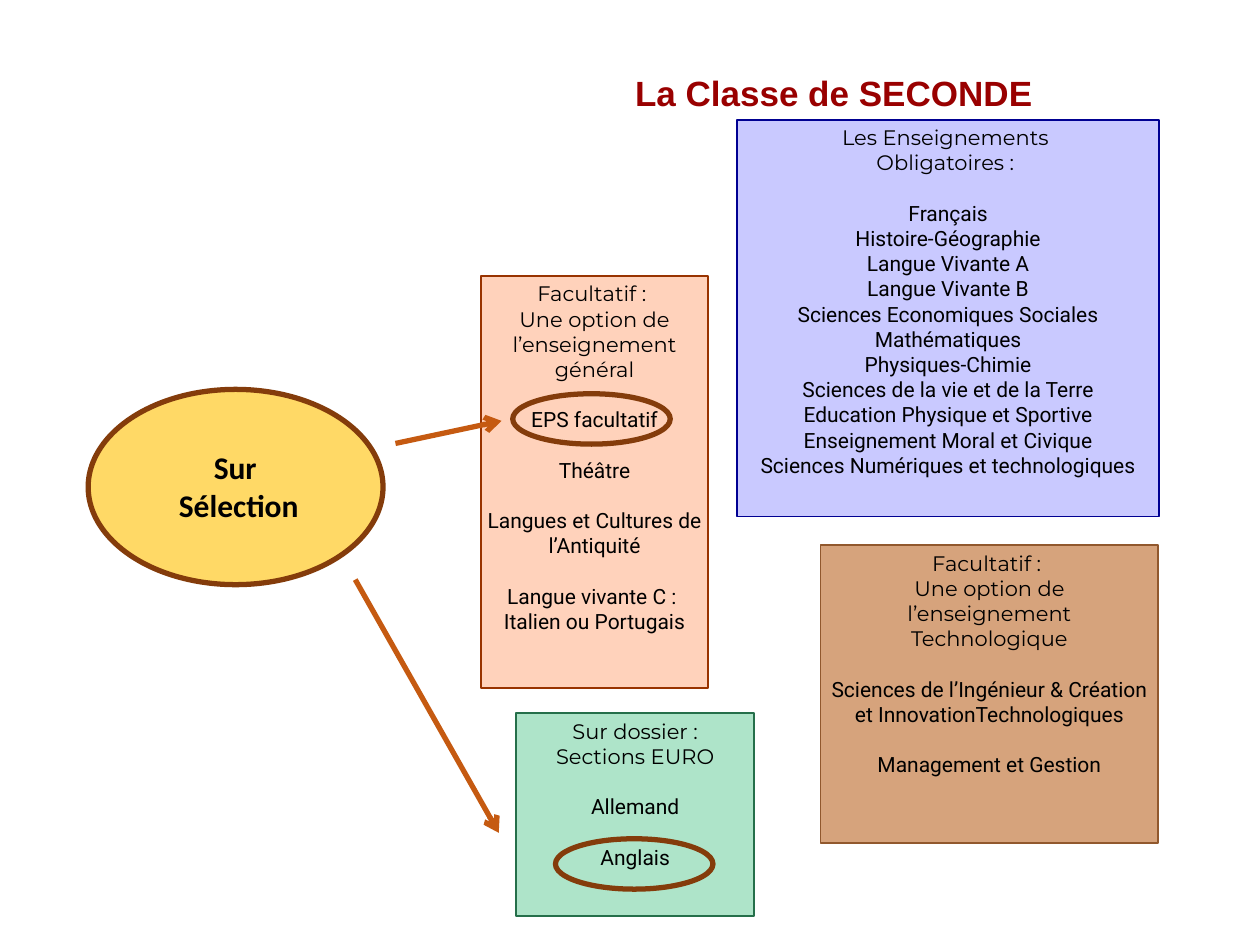
from dataclasses import dataclass

from lxml import etree
from pptx import Presentation
from pptx import util as u
from pptx.dml.color import RGBColor
from pptx.enum import shapes, text
from pptx.oxml.ns import qn


@dataclass(frozen=True)
class Theme:
    title_color: str = "990000"
    ink: str = "000000"
    ring: str = "843C0B"
    arrow: str = "C55A11"
    bubble: str = "FFD966"
    title_size: float = 20
    label_size: float = 18
    body_size: float = 12
    title_font: str = "Arial"
    label_font: str = "Calibri"
    heading_font: str = "Montserrat"
    body_font: str = "Roboto"
    inset: float = 2.88
    group_gap: float = 14.4
    thin: float = 1
    thick: float = 3


class Diagram:
    """Holds the theme and the slide being drawn; lengths are points."""

    def __init__(self, slide, theme):
        self.slide = slide
        self.theme = theme

    def _style(self, paragraph, font, size, color, bold=False):
        for run in paragraph.runs:
            run.font.name = font
            run.font.size = u.Pt(size)
            run.font.bold = bold
            run.font.color.rgb = RGBColor.from_string(color)

    def _shape(self, kind, place, line, width, fill=None):
        shape = self.slide.shapes.add_shape(kind, *map(u.Pt, place))
        shape.shadow.inherit = False
        if fill:
            shape.fill.solid()
            shape.fill.fore_color.rgb = RGBColor.from_string(fill)
        else:
            shape.fill.background()
        shape.line.color.rgb = RGBColor.from_string(line)
        shape.line.width = u.Pt(width)
        return shape

    def _set_insets(self, frame):
        frame.margin_left = frame.margin_right = u.Pt(self.theme.inset)
        frame.margin_top = frame.margin_bottom = u.Pt(self.theme.inset)

    def title(self, place, wording, drop):
        """Place a title whose line starts `drop` points below the box top."""
        theme = self.theme
        frame = self.slide.shapes.add_textbox(*map(u.Pt, place)).text_frame
        frame.word_wrap = True
        self._set_insets(frame)
        frame.margin_top = u.Pt(drop)
        frame.text = wording
        self._style(frame.paragraphs[0], theme.title_font, theme.title_size,
                    theme.title_color, bold=True)

    def label(self, place, lines):
        theme = self.theme
        frame = self.slide.shapes.add_textbox(*map(u.Pt, place)).text_frame
        frame.word_wrap = True
        frame.text = "\n".join(lines)
        for paragraph in frame.paragraphs:
            paragraph.alignment = text.PP_ALIGN.CENTER
            self._style(paragraph, theme.label_font, theme.label_size,
                        theme.ink, bold=True)

    def panel(self, place, fill, line, heading, groups):
        """Draw a box with heading lines, then groups of lines set apart."""
        theme = self.theme
        shape = self._shape(shapes.MSO_SHAPE.RECTANGLE, place, line, theme.thin, fill)
        frame = shape.text_frame
        frame.word_wrap = True
        frame.vertical_anchor = text.MSO_ANCHOR.TOP
        self._set_insets(frame)
        blocks = [heading, *groups]
        frame.text = "\n".join(line for block in blocks for line in block)
        paragraphs = iter(frame.paragraphs)
        for number, block in enumerate(blocks):
            font = theme.body_font if number else theme.heading_font
            for position in range(len(block)):
                paragraph = next(paragraphs)
                paragraph.alignment = text.PP_ALIGN.CENTER
                if number and position == 0:
                    paragraph.space_before = u.Pt(theme.group_gap)
                self._style(paragraph, font, theme.body_size, theme.ink)

    def ellipse(self, place, fill=None):
        self._shape(shapes.MSO_SHAPE.OVAL, place, self.theme.ring, self.theme.thick, fill)

    def arrow(self, start, end):
        connector = self.slide.shapes.add_connector(
            shapes.MSO_CONNECTOR.STRAIGHT, *map(u.Pt, (*start, *end)))
        connector.line.color.rgb = RGBColor.from_string(self.theme.arrow)
        connector.line.width = u.Pt(self.theme.thick)
        etree.SubElement(connector.line._get_or_add_ln(), qn("a:tailEnd"), type="arrow")
        etree.SubElement(connector._element.spPr, qn("a:effectLst"))


def main():
    presentation = Presentation()
    presentation.slide_width = u.Pt(720)
    presentation.slide_height = u.Pt(540)
    slide = presentation.slides.add_slide(presentation.slide_layouts[6])
    diagram = Diagram(slide, Theme())

    diagram.title((360, 15.84, 263.5, 79.2), "La Classe de SECONDE", drop=28.8)
    diagram.panel(
        (421.2, 68.4, 241.2, 226.8), "C9C9FF", "000092",
        ["Les Enseignements ", "Obligatoires : "],
        [["Français", "Histoire-Géographie", "Langue Vivante A", "Langue Vivante B",
          "Sciences Economiques Sociales", "Mathématiques", "Physiques-Chimie",
          "Sciences de la vie et de la Terre", "Education Physique et Sportive",
          "Enseignement Moral et Civique", "Sciences Numériques et technologiques"]])
    option_heading = ["Facultatif : ", "Une option de", "l’enseignement"]
    diagram.panel(
        (275, 157.7, 129.6, 235.4), "FFD2BB", "983300",
        [*option_heading, "général"],
        [["EPS facultatif"], ["Théâtre"], ["Langues et Cultures de l’Antiquité"],
         ["Langue vivante C : ", "Italien ou Portugais"]])
    diagram.panel(
        (468.9, 311.6, 193, 170), "D6A37C", "91582D",
        [*option_heading, "Technologique"],
        [["Sciences de l’Ingénieur & Création et InnovationTechnologiques"],
         ["Management et Gestion"]])
    diagram.panel(
        (295, 407.5, 136, 116), "AEE4C9", "256F4A",
        ["Sur dossier :", "Sections EURO"],
        [["Allemand"], ["Anglais"]])

    for left, top in ((293, 225), (317.4, 479.3)):
        diagram.ellipse((left, top, 90, 28.8))
    diagram.ellipse((50.4, 222.5, 168.5, 111.6), diagram.theme.bubble)
    diagram.label((79.2, 252.7, 114.5, 51.1), ["Sur ", "Sélection"])
    diagram.arrow((226, 253.4), (286.6, 240.5))
    diagram.arrow((203, 331.2), (285, 475.9))

    presentation.save("out.pptx")


if __name__ == "__main__":
    main()
